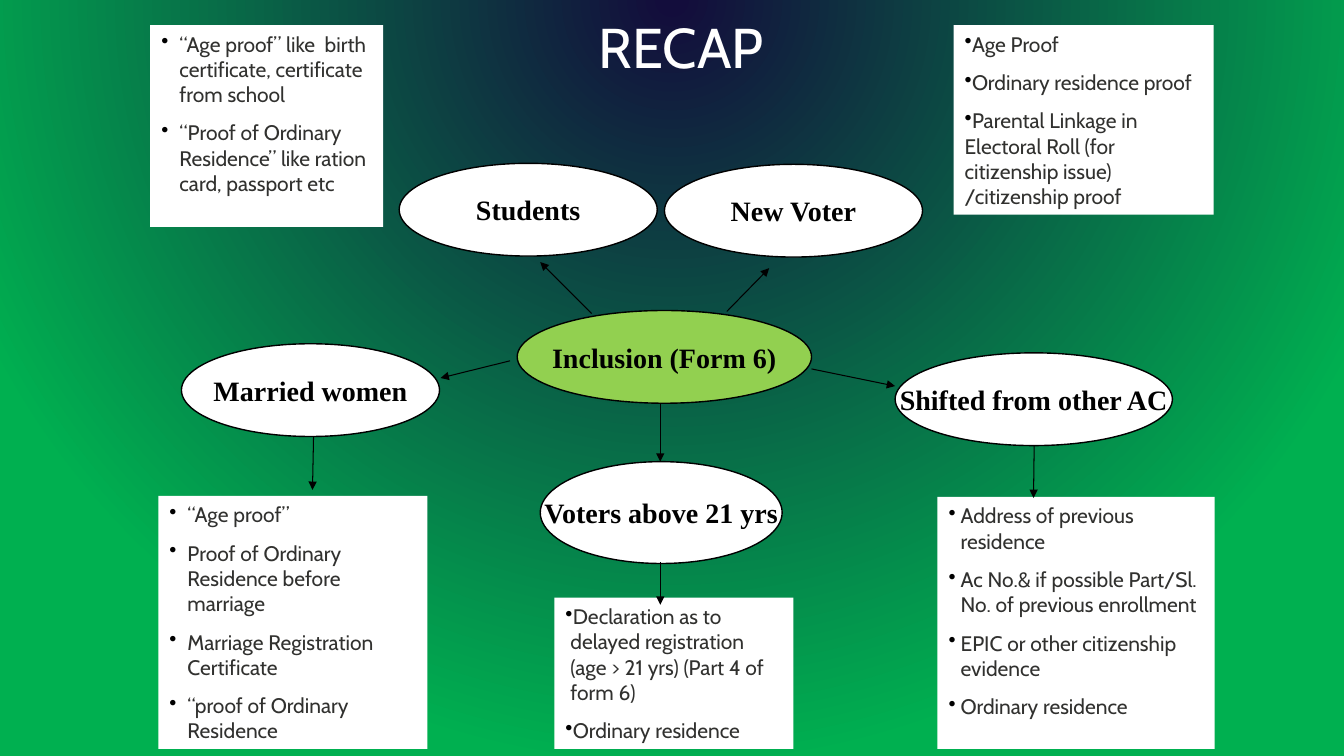
from lxml.etree import SubElement
from pptx import Presentation
from pptx.dml.color import RGBColor
from pptx.enum.shapes import MSO_CONNECTOR as Connector, MSO_SHAPE as Preset
from pptx.enum.text import MSO_ANCHOR as Anchor, MSO_AUTO_SIZE as AutoSize, PP_ALIGN as Align
from pptx.oxml import parse_xml
from pptx.oxml.ns import nsdecls, qn
from pptx.util import Inches, Pt

WIDTH, HEIGHT = Inches(13.33), Inches(7.5)
COLORS = {
    "night": "130D3C", "field": "00B050", "hub": "92D050",
    "white": "FFFFFF", "black": "000000", "body": "31312F",
}
BODY_FONT, NODE_FONT = "Cabin", "Times New Roman"

NODES = [
    ("Inclusion (Form 6)", "hub", (38.48, 41.07, 21.9, 12.27)),
    ("New Voter", "white", (49.44, 21.73, 19.2, 12.27)),
    ("Students", "white", (29.7, 21.6, 19.2, 12.27)),
    ("Married women", "white", (13.5, 45.47, 19.2, 12.27)),
    ("Shifted from other AC", "white", (66.6, 46.67, 20.63, 12.27)),
    ("Voters above 21 yrs", "white", (40.2, 61.07, 18, 13.47)),
]
NOTES = [
    ((11.18, 3.33, 17.33, 26.67), 0.18, [
        "“Age proof” like  birth certificate, certificate from school",
        "“Proof of Ordinary Residence” like ration card, passport etc",
    ]),
    ((70.95, 3.33, 19.35, 25.07), 0, [
        "Age Proof",
        "Ordinary residence proof",
        "Parental Linkage in Electoral Roll (for citizenship issue) /citizenship proof",
    ]),
    ((11.78, 65.6, 20.03, 33.47), 0.18, [
        "“Age proof”",
        "Proof of Ordinary Residence before marriage",
        "Marriage Registration Certificate",
        "“proof of Ordinary Residence",
    ]),
    ((41.25, 79.07, 17.78, 20), 0.05, [
        "Declaration as to delayed registration (age > 21 yrs) (Part 4 of form 6)",
        "Ordinary residence",
    ]),
    ((69.75, 65.73, 20.63, 33.33), 0.12, [
        "Address of previous residence",
        "Ac No.& if possible Part/Sl. No. of previous enrollment",
        "EPIC or other citizenship evidence",
        "Ordinary residence",
    ]),
]
ARROWS = [
    (44.03, 41.47, 40.2, 34.67),
    (54.08, 41.2, 57.23, 35.47),
    (37.95, 47.73, 32.78, 50),
    (60.38, 48.8, 66.6, 51.07),
    (49.13, 53.33, 49.13, 61.07),
    (49.13, 74.4, 49.13, 80),
    (23.33, 57.73, 23.25, 64.8),
    (76.95, 58.93, 76.9, 65.87),
]


def color(name):
    return RGBColor.from_string(COLORS[name])


def shares(values):
    return [round(value / 100 * side) for value, side in zip(values, (WIDTH, HEIGHT) * 2)]


def paint_background(slide):
    slide.background.fill.solid()
    properties = slide.element.find(".//" + qn("p:bgPr"))
    gradient = parse_xml(
        f'<a:gradFill {nsdecls("a")} rotWithShape="1"><a:gsLst>'
        f'<a:gs pos="1000"><a:srgbClr val="{COLORS["night"]}"><a:alpha val="76000"/></a:srgbClr></a:gs>'
        f'<a:gs pos="100000"><a:srgbClr val="{COLORS["field"]}"/></a:gs></a:gsLst>'
        '<a:path path="circle"><a:fillToRect l="50000" t="-80000" r="50000" b="180000"/></a:path>'
        '</a:gradFill>'
    )
    properties.replace(properties[0], gradient)


def add_run(paragraph, text, font_name, size, color_name, bold=False):
    run = paragraph.add_run()
    run.text = text
    run.font.name = font_name
    run.font.size = Pt(size)
    run.font.bold = bold
    run.font.color.rgb = color(color_name)


def add_panel(slide, preset, box, fill_name, anchor, wrap):
    shape = slide.shapes.add_shape(preset, *shares(box))
    shape.shadow.inherit = False
    shape.fill.solid()
    shape.fill.fore_color.rgb = color(fill_name)
    frame = shape.text_frame
    frame.margin_left = frame.margin_right = Inches(0.11)
    frame.margin_top = frame.margin_bottom = Inches(0.06)
    frame.vertical_anchor = anchor
    frame.word_wrap = wrap
    return shape


def add_node(slide, text, fill_name, box):
    shape = add_panel(slide, Preset.OVAL, box, fill_name, Anchor.MIDDLE, False)
    shape.line.color.rgb = color("black")
    shape.line.width = Pt(1)
    paragraph = shape.text_frame.paragraphs[0]
    paragraph.alignment = Align.CENTER
    add_run(paragraph, text, NODE_FONT, 20, "black", True)


def add_bullet(paragraph, indent):
    properties = paragraph._p.get_or_add_pPr()
    properties.set("marL", str(Inches(indent)))
    properties.set("indent", str(-Inches(indent)))
    bullet_color = SubElement(properties, qn("a:buClr"))
    SubElement(bullet_color, qn("a:srgbClr"), val=COLORS["black"])
    SubElement(properties, qn("a:buChar"), char="•")


def add_note(slide, box, indent, items):
    shape = add_panel(slide, Preset.RECTANGLE, box, "white", Anchor.TOP, True)
    shape.line.fill.background()
    frame = shape.text_frame
    for index, item in enumerate(items):
        paragraph = frame.add_paragraph() if index else frame.paragraphs[0]
        add_bullet(paragraph, indent)
        paragraph.alignment = Align.LEFT
        paragraph.space_before = Pt(9.4 if index else 0)
        add_run(paragraph, item, BODY_FONT, 15, "body")


def add_arrow(slide, ends):
    connector = slide.shapes.add_connector(Connector.STRAIGHT, *shares(ends))
    connector.line.color.rgb = color("black")
    connector.line.width = Pt(0.75)
    properties = connector.element.spPr
    SubElement(properties.find(qn("a:ln")), qn("a:tailEnd"), type="triangle")
    SubElement(properties, qn("a:effectLst"))


def set_title(slide, text, box):
    title = slide.shapes.title
    title.left, title.top, title.width, title.height = shares(box)
    frame = title.text_frame
    frame.auto_size = AutoSize.NONE
    frame.vertical_anchor = Anchor.TOP
    paragraph = frame.paragraphs[0]
    paragraph.alignment = Align.CENTER
    add_run(paragraph, text, BODY_FONT, 40, "white")


def main():
    presentation = Presentation()
    presentation.slide_width, presentation.slide_height = WIDTH, HEIGHT
    slide = presentation.slides.add_slide(presentation.slide_layouts[5])
    paint_background(slide)
    set_title(slide, "RECAP", (38.48, 0.93, 24.38, 10.27))
    for node in NODES:
        add_node(slide, *node)
    for note in NOTES:
        add_note(slide, *note)
    for ends in ARROWS:
        add_arrow(slide, ends)
    presentation.save("out.pptx")


if __name__ == "__main__":
    main()
